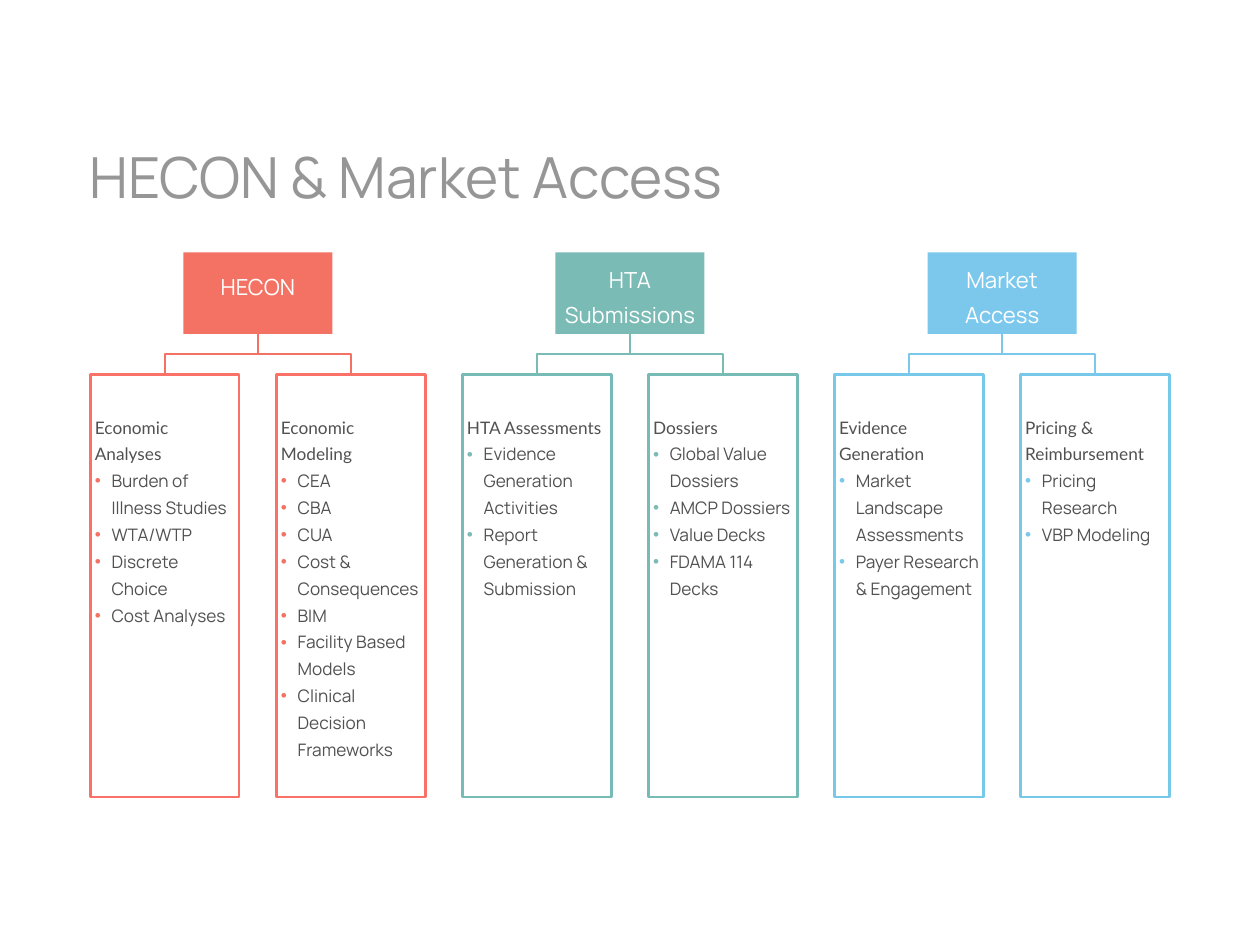
from lxml.etree import SubElement
from pptx import Presentation
from pptx.dml.color import RGBColor
from pptx.enum.shapes import MSO_CONNECTOR as Link, MSO_SHAPE as Preset
from pptx.enum.text import MSO_ANCHOR as Anchor, MSO_AUTO_SIZE as AutoSize, PP_ALIGN as Align
from pptx.oxml.ns import qn
from pptx.util import Cm, Pt

TITLE = "HECON & Market Access"
WHITE = RGBColor(0xFF, 0xFF, 0xFF)
TITLE_GRAY = RGBColor(0x96, 0x96, 0x96)
TEXT_GRAY = RGBColor(0x51, 0x51, 0x51)
CORAL = RGBColor(0xF4, 0x72, 0x64)
CORAL_EDGE = RGBColor(0xF9, 0x71, 0x67)
TEAL = RGBColor(0x7B, 0xBB, 0xB5)
TEAL_EDGE = RGBColor(0x76, 0xBB, 0xB5)
SKY = RGBColor(0x7C, 0xC8, 0xEC)
SKY_EDGE = RGBColor(0x77, 0xC9, 0xE9)

DIVISIONS = [
    ("HECON", CORAL, CORAL_EDGE, 1.0, Cm(0.53), [
        ("Economic Analyses", ["Burden of Illness Studies", "WTA/WTP",
                               "Discrete Choice", "Cost Analyses"]),
        ("Economic Modeling", ["CEA", "CBA", "CUA", "Cost & Consequences", "BIM",
                               "Facility Based Models", "Clinical Decision Frameworks"]),
    ]),
    ("HTA Submissions", TEAL, TEAL_EDGE, 1.3, Cm(0.13), [
        ("HTA Assessments", ["Evidence Generation Activities",
                             "Report Generation & Submission"]),
        ("Dossiers", ["Global Value Dossiers", "AMCP Dossiers",
                      "Value Decks", "FDAMA 114 Decks"]),
    ]),
    ("Market Access", SKY, SKY_EDGE, 1.3, Cm(0.13), [
        ("Evidence Generation", ["Market Landscape Assessments",
                                 "Payer Research & Engagement"]),
        ("Pricing & Reimbursement", ["Pricing Research", "VBP Modeling"]),
    ]),
]

LEFT, PITCH, WIDTH = Cm(2.59), Cm(5.334), Cm(4.27)
HEAD_TOP, HEAD_HEIGHT = Cm(7.24), Cm(2.34)
SERVICE_TOP, SERVICE_HEIGHT = Cm(10.74), Cm(12.12)
INSET, INDENT = Cm(0.13), Cm(0.48)


def set_frame(frame, anchor, top=INSET, bottom=INSET):
    frame.word_wrap = True
    frame.auto_size = AutoSize.NONE
    frame.vertical_anchor = anchor
    frame.margin_left = frame.margin_right = INSET
    frame.margin_top, frame.margin_bottom = top, bottom


def write(paragraph, words, font, size, color, align=Align.LEFT, spacing=1.3):
    paragraph.alignment = align
    paragraph.line_spacing = spacing
    paragraph.space_before = Pt(0)
    run = paragraph.add_run()
    run.text = words
    run.font.name = font
    run.font.size = Pt(size)
    run.font.color.rgb = color


def add_bullet(paragraph, color):
    props = paragraph._p.get_or_add_pPr()
    props.set("marL", str(INDENT))
    props.set("indent", str(-INDENT))
    SubElement(SubElement(props, qn("a:buClr")), qn("a:srgbClr"), val=str(color))
    SubElement(props, qn("a:buFont"), typeface="Arial")
    SubElement(props, qn("a:buChar"), char="•")


def add_box(slide, left, top, height):
    box = slide.shapes.add_shape(Preset.RECTANGLE, left, top, WIDTH, height)
    box.shadow.inherit = False
    return box


def add_head(slide, left, name, color, spacing, bottom):
    head = add_box(slide, left, HEAD_TOP, HEAD_HEIGHT)
    head.fill.solid()
    head.fill.fore_color.rgb = color
    head.line.fill.background()
    set_frame(head.text_frame, Anchor.MIDDLE, bottom=bottom)
    write(head.text_frame.paragraphs[0], name, "Manrope", 18, WHITE, Align.CENTER, spacing)
    return head


def add_service(slide, left, heading, items, color, edge):
    service = add_box(slide, left, SERVICE_TOP, SERVICE_HEIGHT)
    service.fill.solid()
    service.fill.fore_color.rgb = WHITE
    service.line.color.rgb = edge
    service.line.width = Pt(2)
    frame = service.text_frame
    set_frame(frame, Anchor.TOP, top=Cm(1.04))
    write(frame.paragraphs[0], heading, "Lato", 14, TEXT_GRAY)
    for item in items:
        paragraph = frame.add_paragraph()
        add_bullet(paragraph, color)
        write(paragraph, item, "Manrope", 14, TEXT_GRAY)
    return service


def join(slide, head, service, color):
    start, end = head.left + WIDTH // 2, service.left + WIDTH // 2
    drop, run = SERVICE_TOP - HEAD_TOP - HEAD_HEIGHT, abs(end - start)
    branch = slide.shapes.add_connector(
        Link.ELBOW, start, SERVICE_TOP - drop, end, SERVICE_TOP)
    branch.begin_connect(head, 2)
    branch.end_connect(service, 0)
    branch.left = (start + end - drop) // 2
    branch.top = SERVICE_TOP - (drop + run) // 2
    branch.width, branch.height = drop, run
    frame = branch._element.spPr.find(qn("a:xfrm"))
    goes_right = end > start
    frame.set("rot", "16200000" if goes_right else "5400000")
    frame.set("flipH", "1" if goes_right else "0")
    branch.line.color.rgb = color
    branch.line.width = Pt(2)
    SubElement(branch._element.spPr, qn("a:effectLst"))


def main():
    """Build the slide of three divisions with two services each."""
    deck = Presentation()
    deck.slide_width, deck.slide_height = Cm(36.12), Cm(27.1)
    slide = deck.slides.add_slide(deck.slide_layouts[5])
    title = slide.shapes.title
    title.left, title.top, title.width, title.height = Cm(2.49), Cm(3.4), Cm(29.4), Cm(2.7)
    set_frame(title.text_frame, Anchor.MIDDLE)
    title.text_frame.margin_left = Cm(0.08)
    write(title.text_frame.paragraphs[0], TITLE, "Manrope", 46, TITLE_GRAY)

    for rank, (name, color, edge, spacing, bottom, services) in enumerate(DIVISIONS):
        left = LEFT + 2 * rank * PITCH
        head = add_head(slide, left + PITCH // 2, name, color, spacing, bottom)
        for side, (heading, items) in enumerate(services):
            service = add_service(slide, left + side * PITCH, heading, items, color, edge)
            join(slide, head, service, color)
    deck.save("out.pptx")


if __name__ == "__main__":
    main()
